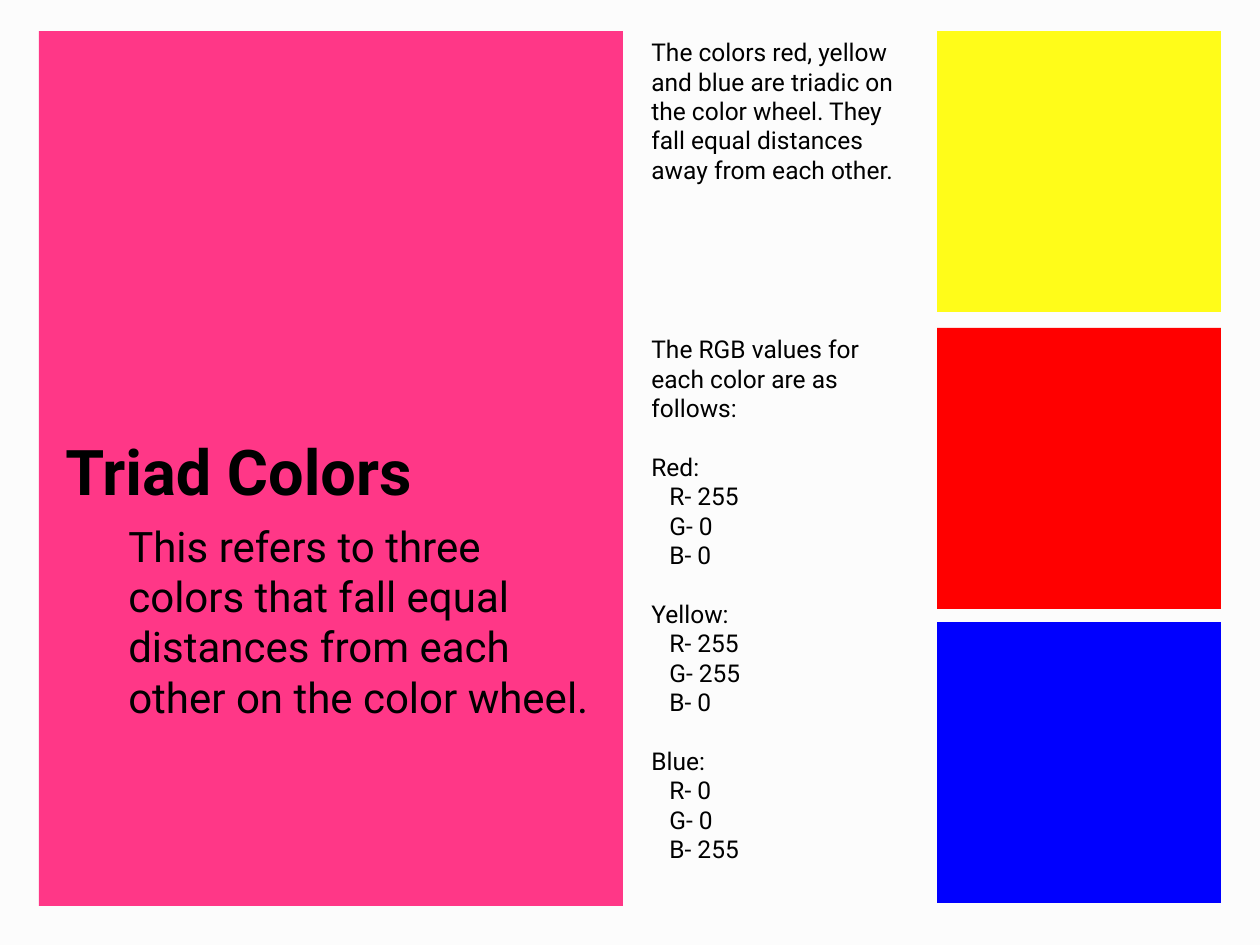
from pptx import Presentation
from pptx.dml.color import RGBColor
from pptx.enum.shapes import MSO_SHAPE
from pptx.enum.text import MSO_ANCHOR
from pptx.util import Emu, Pt

RECTANGLE = MSO_SHAPE.RECTANGLE
TOP, BOTTOM = MSO_ANCHOR.TOP, MSO_ANCHOR.BOTTOM

PAPER = RGBColor(0xFC, 0xFC, 0xFC)
PINK = RGBColor(0xFF, 0x37, 0x87)
YELLOW = RGBColor(0xFF, 0xFC, 0x19)
RED = RGBColor(0xFF, 0x00, 0x00)
BLUE = RGBColor(0x00, 0x00, 0xFF)
BLACK = RGBColor(0x00, 0x00, 0x00)

FONT = "Roboto"
BLANK_LAYOUT = 6
PX_PER_INCH = 126
NOTE_SIZE = 14
GROUP_GAP = 16.8
ROW_TOPS = (31, 328, 622)
SWATCH_HEIGHT = 281

RGB_VALUES = (
    ("Red:", (255, 0, 0)),
    ("Yellow:", (255, 255, 0)),
    ("Blue:", (0, 0, 255)),
)


def px(length):
    """Turn a length in px into EMU."""
    return Emu(round(length * 914400 / PX_PER_INCH))


def add_block(slide, box, color):
    """Add a plain filled rectangle."""
    shape = slide.shapes.add_shape(RECTANGLE, *map(px, box))
    shape.shadow.inherit = False
    shape.fill.solid()
    shape.fill.fore_color.rgb = color
    shape.line.fill.background()


def add_text(slide, box, lines, size, bold=False, anchor=TOP):
    """Add a text box of (text, indent in px, space before in points) lines."""
    text_frame = slide.shapes.add_textbox(*map(px, box)).text_frame
    text_frame.word_wrap = True
    text_frame.vertical_anchor = anchor
    for index, (text, indent, gap) in enumerate(lines):
        paragraph = text_frame.add_paragraph() if index else text_frame.paragraphs[0]
        paragraph.text = text
        paragraph.space_before = Pt(gap)
        paragraph._p.get_or_add_pPr().set("marL", str(px(indent)))
        font = paragraph.runs[0].font
        font.name = FONT
        font.size = Pt(size)
        font.bold = bold
        font.color.rgb = BLACK


def add_title_panel(slide, left, top, width, height):
    """Add the pink panel with the title above its definition."""
    add_block(slide, (left, top, width, height), PINK)
    text_left, text_width = left + 14, width - 31
    add_text(slide, (text_left, top + 323, text_width, 160),
             [("Triad Colors", 0, 0)], 36, bold=True, anchor=BOTTOM)
    definition = ("This refers to three colors that fall equal distances "
                  "from each other on the color wheel.")
    add_text(slide, (text_left, top + 483, text_width, 330),
             [(definition, 63, 0)], 24)


def add_notes_column(slide, left, width):
    """Add the explanation and the list of RGB values."""
    explanation = ("The colors red, yellow and blue are triadic on the color wheel. "
                   "They fall equal distances away from each other.")
    add_text(slide, (left, ROW_TOPS[0], width, SWATCH_HEIGHT),
             [(explanation, 0, 0)], NOTE_SIZE)
    lines = [("The RGB values for each color are as follows:", 0, 0)]
    for name, values in RGB_VALUES:
        lines.append((name, 0, GROUP_GAP))
        lines += [(f"{channel}- {value}", 18, 0) for channel, value in zip("RGB", values)]
    add_text(slide, (left, ROW_TOPS[1], width, 586), lines, NOTE_SIZE)


def add_swatch_column(slide, left, width):
    """Add the three color swatches."""
    for top, color in zip(ROW_TOPS, (YELLOW, RED, BLUE)):
        add_block(slide, (left, top, width, SWATCH_HEIGHT), color)


def main():
    """Build the slide and save it."""
    presentation = Presentation()
    presentation.slide_width, presentation.slide_height = px(1260), px(945)
    slide = presentation.slides.add_slide(presentation.slide_layouts[BLANK_LAYOUT])
    slide.background.fill.solid()
    slide.background.fill.fore_color.rgb = PAPER
    add_title_panel(slide, 39, 31, 584, 875)
    add_notes_column(slide, 639, 284)
    add_swatch_column(slide, 937, 284)
    presentation.save("out.pptx")


if __name__ == "__main__":
    main()
